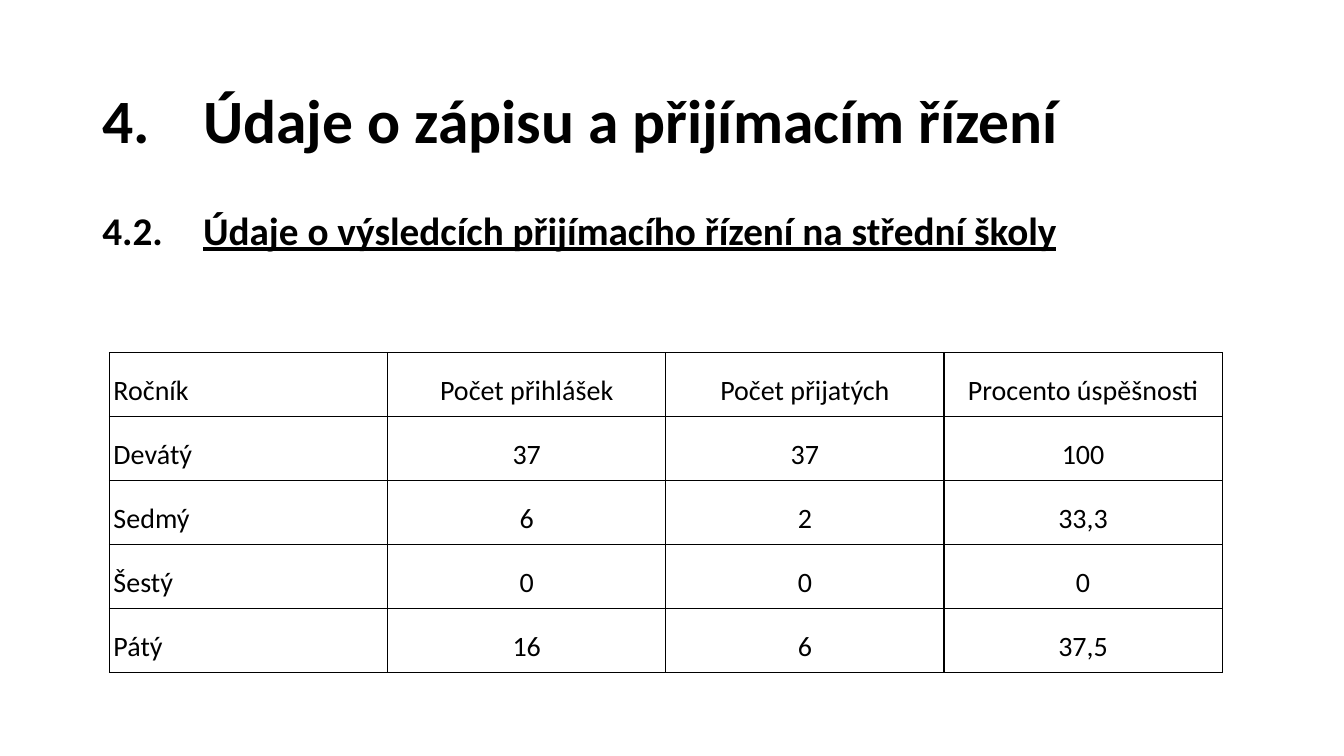
"""Build the slide on admission results for secondary schools."""
from dataclasses import dataclass

from lxml.etree import SubElement
from pptx import Presentation
from pptx.dml.color import RGBColor
from pptx.enum.text import MSO_ANCHOR, MSO_AUTO_SIZE, PP_ALIGN
from pptx.oxml.ns import qn
from pptx.util import Cm, Pt

BLACK = "000000"
WHITE = "FFFFFF"
FONT = "Calibri"
ROWS = [
    ("Ročník", "Počet přihlášek", "Počet přijatých", "Procento úspěšnosti"),
    ("Devátý", "37", "37", "100"),
    ("Sedmý", "6", "2", "33,3"),
    ("Šestý", "0", "0", "0"),
    ("Pátý", "16", "6", "37,5"),
]


@dataclass
class Heading:
    """A numbered heading with its place and size in centimetres and points."""
    label: str
    text: str
    top: float
    height: float
    size: float
    anchor: MSO_ANCHOR
    before: float = 0
    line: bool = False


TITLE = Heading("4. \t", "Údaje o zápisu a přijímacím řízení",
                1.07, 4.11, 44, MSO_ANCHOR.MIDDLE)
TOPIC = Heading("4.2. \t", "Údaje o výsledcích přijímacího řízení na střední školy",
                5.2, 2.5, 28, MSO_ANCHOR.TOP, 10, True)


def color(code: str) -> RGBColor:
    """Turn a hex string into a colour."""
    return RGBColor.from_string(code)


def style(run, size: float, bold: bool = False) -> None:
    """Set the font of a run."""
    font = run.font
    font.name, font.size, font.bold = FONT, Pt(size), bold
    font.color.rgb = color(BLACK)


def write(shape, head: Heading) -> None:
    """Place a shape and fill it with a heading."""
    shape.left, shape.top = Cm(2.33), Cm(head.top)
    shape.width, shape.height = Cm(29.21), Cm(head.height)
    frame = shape.text_frame
    frame.word_wrap = True
    frame.auto_size = MSO_AUTO_SIZE.NONE
    frame.vertical_anchor = head.anchor
    para = frame.paragraphs[0]
    para.text = head.label
    para.add_run().text = head.text
    para.alignment = PP_ALIGN.LEFT
    para.line_spacing = 0.9
    para.space_before = Pt(head.before)
    for run in para.runs:
        style(run, head.size, True)
    if head.line:
        para.runs[1].font.underline = True


def frame_cell(cell) -> None:
    """Give a cell a thin border on all sides."""
    props = cell._tc.get_or_add_tcPr()
    for side in ("lnL", "lnR", "lnT", "lnB"):
        edge = SubElement(props, qn(f"a:{side}"), w=str(Pt(1)))
        fill = SubElement(edge, qn("a:solidFill"))
        SubElement(fill, qn("a:srgbClr"), val=BLACK)


def fill_cell(cell, text: str, align: PP_ALIGN) -> None:
    """Write and format one cell."""
    frame_cell(cell)
    cell.fill.solid()
    cell.fill.fore_color.rgb = color(WHITE)
    cell.margin_left = cell.margin_right = Cm(0.1)
    cell.margin_top = cell.margin_bottom = Cm(0.1)
    para = cell.text_frame.paragraphs[0]
    para.text = text
    para.alignment = align
    para.line_spacing = 1.5
    style(para.runs[0], 20)


def add_grid(slide) -> None:
    """Add the table of results."""
    rows, cols = len(ROWS), len(ROWS[0])
    table = slide.shapes.add_table(rows, cols, Cm(2.76), Cm(8.89),
                                   Cm(7.01 * cols), Cm(1.61 * rows)).table
    table.first_row = table.horz_banding = False
    for row, texts in enumerate(ROWS):
        for col, text in enumerate(texts):
            align = PP_ALIGN.CENTER if col else PP_ALIGN.JUSTIFY
            fill_cell(table.cell(row, col), text, align)


def main() -> None:
    """Build and save the slide."""
    deck = Presentation()
    deck.slide_width, deck.slide_height = Cm(33.87), Cm(19.05)
    slide = deck.slides.add_slide(deck.slide_layouts[5])
    write(slide.shapes.title, TITLE)
    write(slide.shapes.add_textbox(0, 0, 0, 0), TOPIC)
    add_grid(slide)
    deck.save("out.pptx")


if __name__ == "__main__":
    main()
